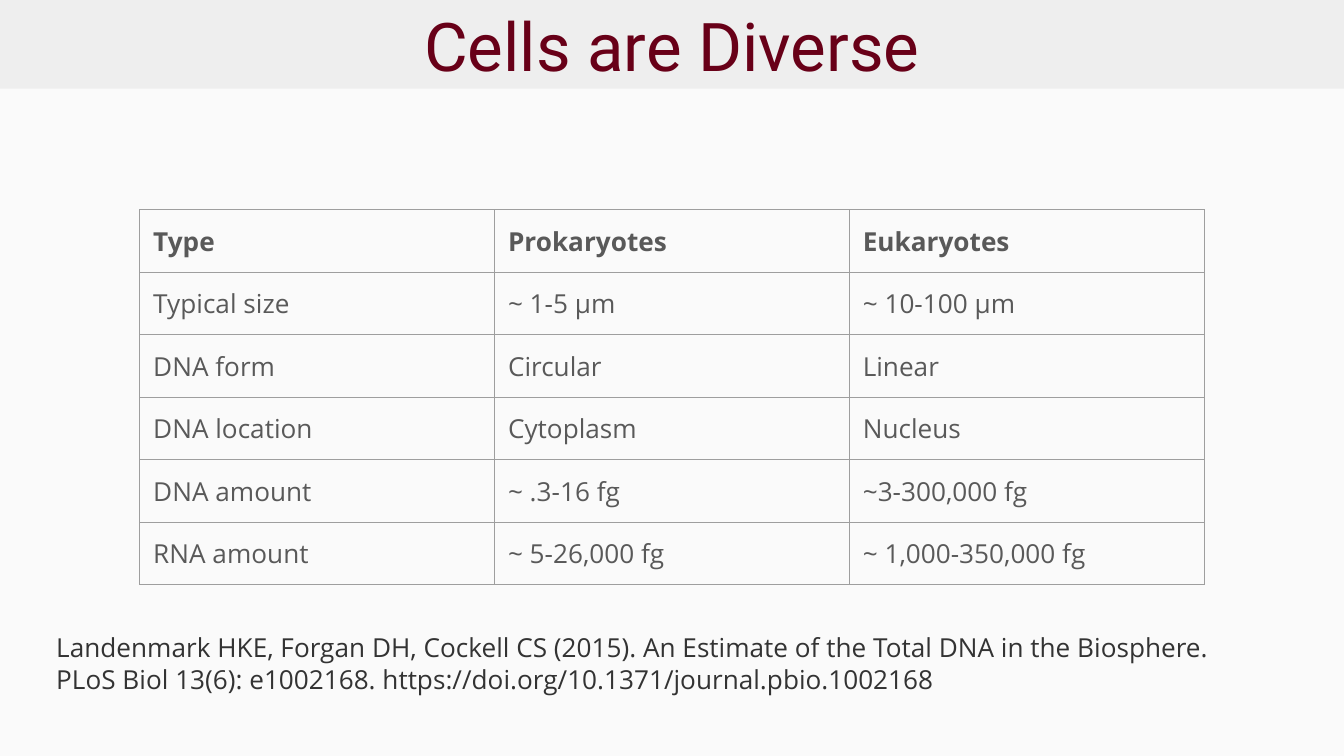
from dataclasses import dataclass

from lxml.etree import SubElement
from pptx import Presentation
from pptx.dml.color import RGBColor
from pptx.enum.shapes import MSO_SHAPE
from pptx.enum.text import MSO_ANCHOR, PP_ALIGN
from pptx.oxml.ns import qn
from pptx.util import Inches, Pt


@dataclass(frozen=True)
class Theme:
    background: str = "FAFAFA"
    banner: str = "EEEEEE"
    title: str = "680018"
    body: str = "595959"
    citation: str = "333333"
    border: str = "9E9E9E"
    title_font: str = "Roboto"
    body_font: str = "Open Sans"
    title_size: int = 36
    body_size: int = 14
    border_width: float = 0.75
    inset: float = 0.1


THEME = Theme()

COMPARISON = [
    ("Type", "Prokaryotes", "Eukaryotes"),
    ("Typical size", "~ 1-5 μm", "~ 10-100 μm"),
    ("DNA form", "Circular", "Linear"),
    ("DNA location", "Cytoplasm", "Nucleus"),
    ("DNA amount", "~ .3-16 fg", "~3-300,000 fg"),
    ("RNA amount", "~ 5-26,000 fg", "~ 1,000-350,000 fg"),
]
CITATION = (
    "Landenmark HKE, Forgan DH, Cockell CS (2015). An Estimate of the Total DNA "
    "in the Biosphere. PLoS Biol 13(6): e1002168. "
    "https://doi.org/10.1371/journal.pbio.1002168"
)


def set_insets(target):
    for side in ("left", "right", "top", "bottom"):
        setattr(target, f"margin_{side}", Inches(THEME.inset))


def write(frame, text, color, font=THEME.body_font, size=THEME.body_size,
          bold=False, alignment=PP_ALIGN.LEFT):
    frame.word_wrap = True
    paragraph = frame.paragraphs[0]
    paragraph.alignment = alignment
    run = paragraph.add_run()
    run.text = text
    for name, value in {"name": font, "size": Pt(size), "bold": bold}.items():
        setattr(run.font, name, value)
    run.font.color.rgb = RGBColor.from_string(color)


def outline_cell(cell):
    properties = cell._tc.get_or_add_tcPr()
    for position, side in enumerate(("lnL", "lnR", "lnT", "lnB")):
        line = SubElement(properties, qn(f"a:{side}"), w=str(Pt(THEME.border_width)))
        fill = SubElement(line, qn("a:solidFill"))
        SubElement(fill, qn("a:srgbClr"), val=THEME.border)
        # Borders must come before the cell fill
        properties.insert(position, line)


def add_banner(slide, left, top, width, height):
    banner = slide.shapes.add_shape(
        MSO_SHAPE.RECTANGLE, Inches(left), Inches(top), Inches(width), Inches(height))
    banner.shadow.inherit = False
    banner.fill.solid()
    banner.fill.fore_color.rgb = RGBColor.from_string(THEME.banner)
    banner.line.fill.background()
    frame = banner.text_frame
    frame.vertical_anchor = MSO_ANCHOR.MIDDLE
    set_insets(frame)
    write(frame, "Cells are Diverse", THEME.title, THEME.title_font,
          THEME.title_size, alignment=PP_ALIGN.CENTER)


def add_comparison(slide, left, top, width, height):
    row_count, column_count = len(COMPARISON), len(COMPARISON[0])
    table = slide.shapes.add_table(
        row_count, column_count,
        Inches(left), Inches(top), Inches(width), Inches(height)).table
    table.horz_banding = False
    for row_index, entries in enumerate(COMPARISON):
        for column_index, entry in enumerate(entries):
            cell = table.cell(row_index, column_index)
            cell.fill.background()
            set_insets(cell)
            outline_cell(cell)
            write(cell.text_frame, entry, THEME.body, bold=row_index == 0)


def add_citation(slide, left, top, width, height):
    citation = slide.shapes.add_textbox(
        Inches(left), Inches(top), Inches(width), Inches(height))
    set_insets(citation.text_frame)
    write(citation.text_frame, CITATION, THEME.citation)


def main():
    presentation = Presentation()
    # Widescreen, 16:9
    presentation.slide_width = Inches(10)
    presentation.slide_height = presentation.slide_width * 9 // 16
    slide = presentation.slides.add_slide(presentation.slide_layouts[6])
    slide.background.fill.solid()
    slide.background.fill.fore_color.rgb = RGBColor.from_string(THEME.background)

    add_banner(slide, 0, 0, 10, 0.66)
    add_comparison(slide, 1.04, 1.56, 7.92, 2.52)
    add_citation(slide, 0.32, 4.6, 9.21, 0.5)
    presentation.save("out.pptx")


if __name__ == "__main__":
    main()
